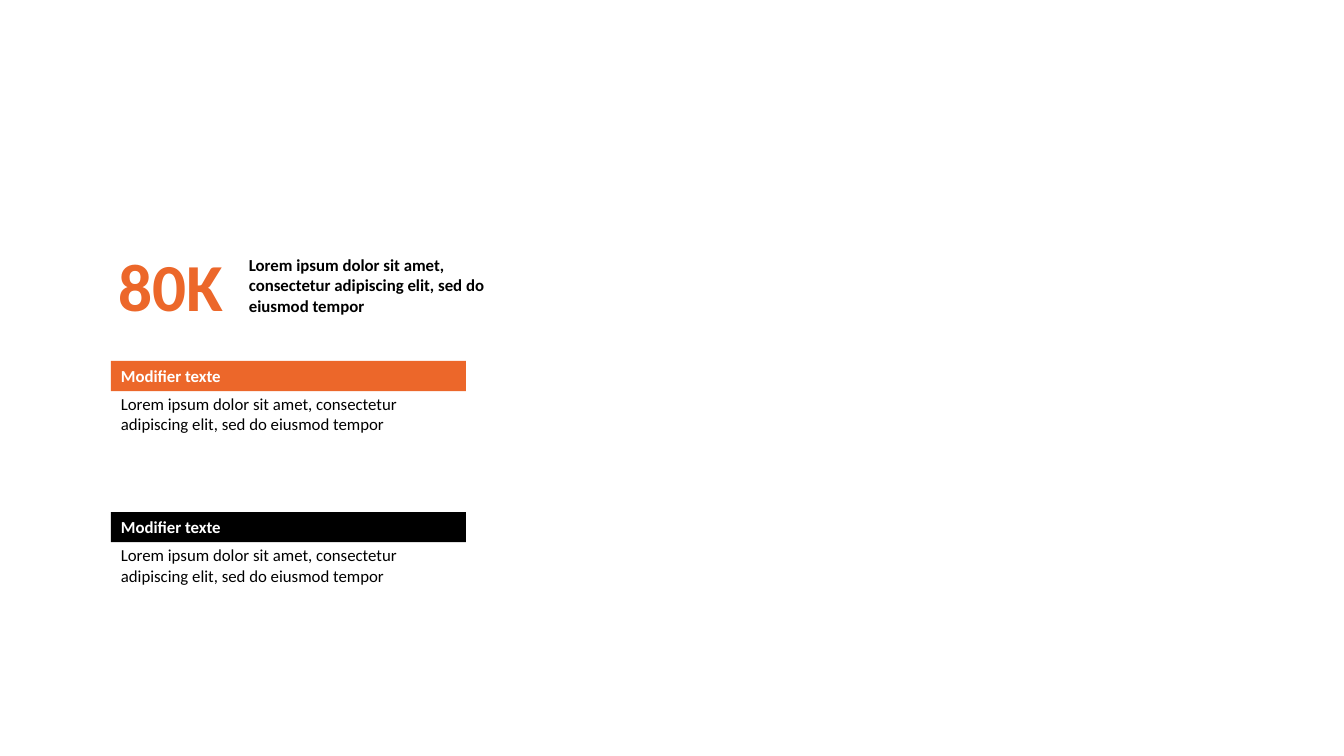
from dataclasses import dataclass

from pptx import Presentation
from pptx import util as u
from pptx.dml.color import RGBColor
from pptx.enum import shapes, text

PX = 9144  # EMU per px, 100 px to the inch
FONT = "Calibri"
COLORS = {"orange": "EC672A", "black": "000000", "white": "FFFFFF"}
LOREM = "Lorem ipsum dolor sit amet, consectetur adipiscing elit, sed do eiusmod tempor"


@dataclass
class Card:
    top: int
    color: str
    title: str
    body: str


CARDS = [
    Card(358, "orange", "Modifier texte", LOREM),
    Card(508, "black", "Modifier texte", LOREM),
]
LEFT, CARD_W, HEADER_H, BODY_H = 110, 352, 30, 50
BODY_OFFSET = 28


def box(x: int, y: int, w: int, h: int) -> list[u.Emu]:
    return [u.Emu(v * PX) for v in (x, y, w, h)]


def write(sp, content: str, *, size: int = 12, color: str = "black",
          bold: bool = False, anchor=text.MSO_ANCHOR.TOP,
          insets: tuple[int, int, int, int] = (10, 5, 10, 5)) -> None:
    tf = sp.text_frame
    tf.word_wrap = True
    tf.auto_size = text.MSO_AUTO_SIZE.SHAPE_TO_FIT_TEXT
    tf.vertical_anchor = anchor
    tf.margin_left, tf.margin_top, tf.margin_right, tf.margin_bottom = (
        u.Emu(v * PX) for v in insets)
    p = tf.paragraphs[0]
    p.alignment = text.PP_ALIGN.LEFT
    r = p.add_run()
    r.text = content
    r.font.name = FONT
    r.font.size = u.Pt(size)
    r.font.bold = bold
    r.font.color.rgb = RGBColor.from_string(COLORS[color])


def draw_card(slide, card: Card) -> None:
    group = slide.shapes.add_group_shape()
    header = group.shapes.add_shape(
        shapes.MSO_SHAPE.RECTANGLE, *box(LEFT, card.top, CARD_W, HEADER_H))
    header.shadow.inherit = False
    header.fill.solid()
    header.fill.fore_color.rgb = RGBColor.from_string(COLORS[card.color])
    header.line.fill.background()
    write(header, card.title, color="white", bold=True,
          anchor=text.MSO_ANCHOR.MIDDLE)
    body = group.shapes.add_textbox(
        *box(LEFT, card.top + BODY_OFFSET, CARD_W, BODY_H))
    write(body, card.body)


def main() -> None:
    prs = Presentation()
    prs.slide_width, prs.slide_height = u.Inches(13.33), u.Inches(7.5)
    slide = prs.slides.add_slide(prs.slide_layouts[6])

    # Header bars with their descriptions
    for card in CARDS:
        draw_card(slide, card)

    # Key figure and its caption
    caption = slide.shapes.add_textbox(*box(237, 248, 287, 71))
    write(caption, LOREM, bold=True)
    figure = slide.shapes.add_textbox(*box(LEFT, 242, 145, 81))
    write(figure, "80K", size=48, color="orange", bold=True,
          insets=(8, 0, 4, 0))

    prs.save("out.pptx")


if __name__ == "__main__":
    main()
